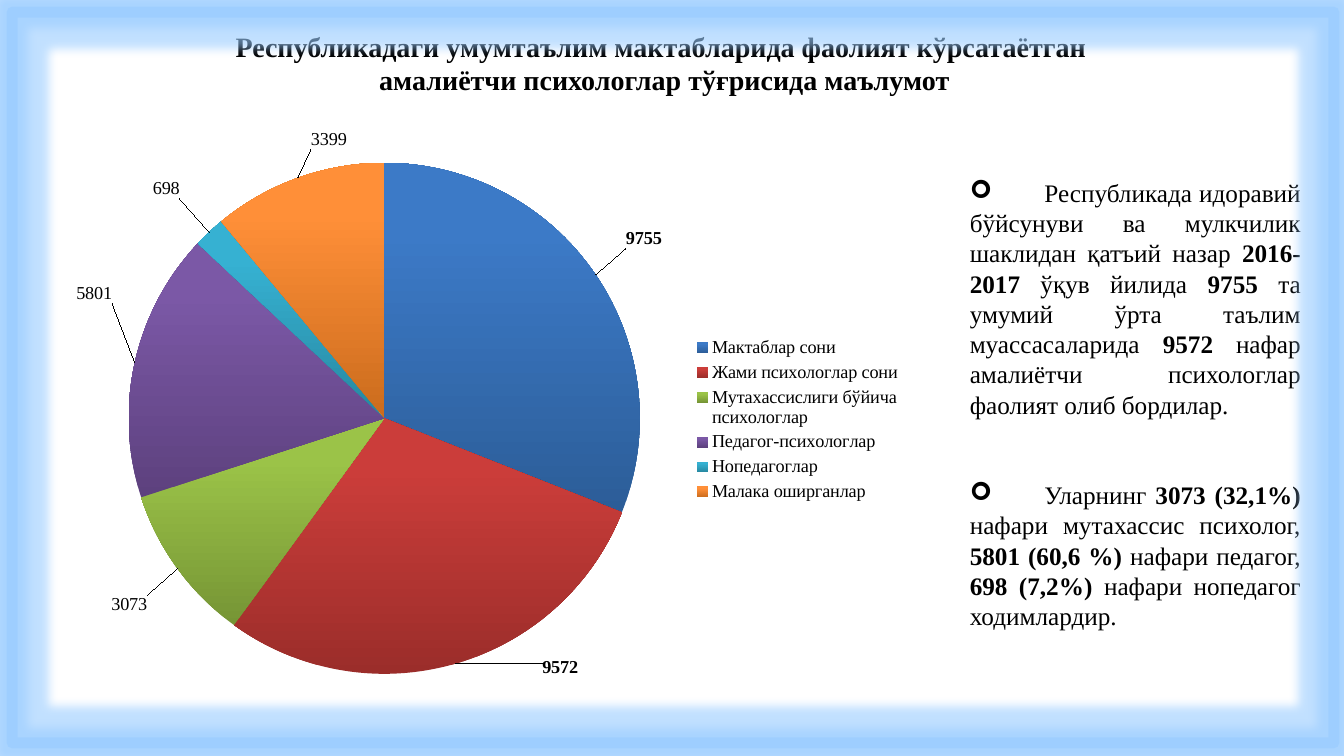
from dataclasses import dataclass

from lxml import etree
from pptx import Presentation
from pptx.chart.data import CategoryChartData
from pptx.dml.color import RGBColor
from pptx.enum.chart import XL_CHART_TYPE, XL_LABEL_POSITION, XL_LEGEND_POSITION
from pptx.enum.shapes import MSO_SHAPE
from pptx.enum.text import MSO_ANCHOR, PP_ALIGN
from pptx.oxml import parse_xml
from pptx.oxml.ns import nsdecls, qn
from pptx.util import Inches, Pt

PIE = XL_CHART_TYPE.PIE
OUTSIDE = XL_LABEL_POSITION.OUTSIDE_END
RIGHT = XL_LEGEND_POSITION.RIGHT
RECT = MSO_SHAPE.RECTANGLE
TOP, MIDDLE = MSO_ANCHOR.TOP, MSO_ANCHOR.MIDDLE
CENTER, JUSTIFY = PP_ALIGN.CENTER, PP_ALIGN.JUSTIFY


@dataclass(frozen=True)
class Theme:
    font: str = "Times New Roman"
    text: str = "000000"
    frame: str = "99CCFF"
    title: int = 20
    body: int = 18
    chart: int = 13


THEME = Theme()

# Category, share in percent, label, label offset (x, y), light and dark tone
SLICES = [
    ("Мактаблар сони", 31, "9755", (0.03, -0.04), "3C7AC7", "2C5D98"),
    ("Жами психологлар сони", 29, "9572", (0.1, -0.02), "CB3D3A", "9B2D2A"),
    ("Мутахассислиги бўйича психологлар", 10, "3073", (-0.03, 0.04), "9BC348", "769535"),
    ("Педагог-психологлар", 17, "5801", (-0.02, -0.1), "7B58A6", "5D417E"),
    ("Нопедагоглар", 2, "698", (-0.03, -0.05), "36B1D2", "2787A0"),
    ("Малака оширганлар", 11, "3399", (0.06, -0.04), "FF8F38", "CB6C1D"),
]
BOLD_LABELS = ("9755", "9572")

TITLE = [
    [("Республикадаги умумтаълим мактабларида фаолият кўрсатаётган ", True)],
    [("амалиётчи психологлар тўғрисида маълумот", True)],
]
NOTES = [
    [
        ("\tРеспубликада идоравий бўйсунуви ва мулкчилик шаклидан қатъий назар ", False),
        ("2016-2017", True),
        (" ўқув йилида ", False),
        ("9755 ", True),
        ("та умумий ўрта таълим муассасаларида ", False),
        ("9572", True),
        (" нафар амалиётчи психологлар фаолият олиб бордилар.", False),
    ],
    [
        ("\tУларнинг ", False),
        ("3073 (32,1%) ", True),
        ("нафари мутахассис психолог, ", False),
        ("5801 (60,6 %) ", True),
        ("нафари педагог, ", False),
        ("698 (7,2%) ", True),
        ("нафари нопедагог ходимлардир.", False),
    ],
]


def style_font(font, size, bold=False):
    font.name, font.size, font.bold = THEME.font, Pt(size), bold
    font.color.rgb = RGBColor.from_string(THEME.text)


def add_bullet(p, char, tab):
    """Give a paragraph a bullet, with its first words at a tab stop."""
    pPr = p._p.get_or_add_pPr()
    pPr.set("marL", "0")
    pPr.set("indent", "0")
    etree.SubElement(pPr, qn("a:buFont"), typeface="Wingdings")
    etree.SubElement(pPr, qn("a:buChar"), char=char)
    tabs = etree.SubElement(pPr, qn("a:tabLst"))
    etree.SubElement(tabs, qn("a:tab"), pos=str(tab), algn="l")


def add_text(slide, box, paragraphs, *, size, align, anchor=TOP, gap=0, bullet=None):
    tf = slide.shapes.add_textbox(*map(Inches, box)).text_frame
    tf.word_wrap = True
    tf.vertical_anchor = anchor
    for i, runs in enumerate(paragraphs):
        p = tf.paragraphs[0] if i == 0 else tf.add_paragraph()
        p.alignment = align
        if i and gap:
            p.space_before = Pt(gap)
        if bullet:
            add_bullet(p, bullet, Inches(0.74))
        for text, bold in runs:
            r = p.add_run()
            r.text = text
            style_font(r.font, size, bold)


def manual_layout(**values):
    """Build a chart layout from fractions of the chart's size."""
    parts = "".join(f'<c:{tag} val="{val}"/>' for tag, val in values.items())
    return parse_xml(
        f'<c:layout {nsdecls("c")}><c:manualLayout>{parts}</c:manualLayout></c:layout>')


def set_layout(parent, layout, after):
    """Put a layout right after the named child, in place of any other."""
    for old in parent.findall(qn("c:layout")):
        parent.remove(old)
    if after is None:
        parent.insert(0, layout)
    else:
        parent.find(qn(after)).addnext(layout)


def style_slice(point, label, offset, light, dark):
    fill = point.format.fill
    fill.gradient()
    fill.gradient_angle = 90
    for stop, position, color in zip(fill.gradient_stops, (0, 0.8), (dark, light)):
        stop.position = position
        stop.color.rgb = RGBColor.from_string(color)

    dl = point.data_label
    r = dl.text_frame.paragraphs[0].add_run()
    r.text = label
    style_font(r.font, THEME.chart, label in BOLD_LABELS)
    dl.position = OUTSIDE
    dLbl = dl._dLbl
    set_layout(dLbl, manual_layout(x=offset[0], y=offset[1]), "c:idx")


def add_pie(slide, box):
    data = CategoryChartData()
    data.categories = [row[0] for row in SLICES]
    data.add_series("Series 1", [row[1] for row in SLICES])
    chart = slide.shapes.add_chart(PIE, *map(Inches, box), data).chart
    chart.has_title = False
    style_font(chart.font, THEME.chart)

    plot = chart.plots[0]
    plot.vary_by_categories = True
    series = plot.series[0]
    labels = series.data_labels
    labels.show_percentage = True
    labels.show_value = False
    labels.position = OUTSIDE
    style_font(labels.font, THEME.chart, bold=True)
    for i, (_, _, label, offset, light, dark) in enumerate(SLICES):
        style_slice(series.points[i], label, offset, light, dark)

    # Leader lines from the slices to the moved labels
    dLbls = labels._element
    for old in dLbls.findall(qn("c:showLeaderLines")):
        dLbls.remove(old)
    etree.SubElement(dLbls, qn("c:showLeaderLines"), val="1")

    chart.has_legend = True
    legend = chart.legend
    legend.position = RIGHT
    legend.include_in_layout = False
    style_font(legend.font, THEME.chart)

    # Places of the pie and the legend
    set_layout(legend._element, manual_layout(
        xMode="edge", yMode="edge", x=0.74, y=0.35, w=0.25, h=0.3), "c:legendPos")
    set_layout(chart._chartSpace.chart.plotArea, manual_layout(
        layoutTarget="inner", xMode="edge", yMode="edge",
        x=0.08, y=0.055, w=0.6, h=0.885), None)


def add_frame(slide, box):
    sp = slide.shapes.add_shape(RECT, *map(Inches, box))
    sp.shadow.inherit = False
    sp.fill.background()
    sp.line.width = Pt(7.75)
    sp.line.color.rgb = RGBColor.from_string(THEME.frame)
    color = sp.line._ln.find(".//" + qn("a:srgbClr"))
    etree.SubElement(color, qn("a:alpha"), val="64000")

    # Soft glow around the line
    effects = sp._element.spPr.find(qn("a:effectLst"))
    glow = etree.SubElement(effects, qn("a:glow"), rad=str(Pt(14)))
    tint = etree.SubElement(glow, qn("a:srgbClr"), val=THEME.frame)
    etree.SubElement(tint, qn("a:alpha"), val="60000")


def main():
    prs = Presentation()
    prs.slide_width, prs.slide_height = Inches(13.33), Inches(7.5)
    slide = prs.slides.add_slide(prs.slide_layouts[6])

    add_text(slide, (1.47, 0.24, 10.24, 0.77), TITLE,
             size=THEME.title, align=CENTER, anchor=MIDDLE)
    add_pie(slide, (0.6, 1.29, 8.45, 5.75))
    add_text(slide, (9.52, 1.71, 3.48, 4.68), NOTES,
             size=THEME.body, align=JUSTIFY, gap=43, bullet="➢")
    add_frame(slide, (0.12, 0.12, 13.11, 7.25))
    prs.save("out.pptx")


if __name__ == "__main__":
    main()
